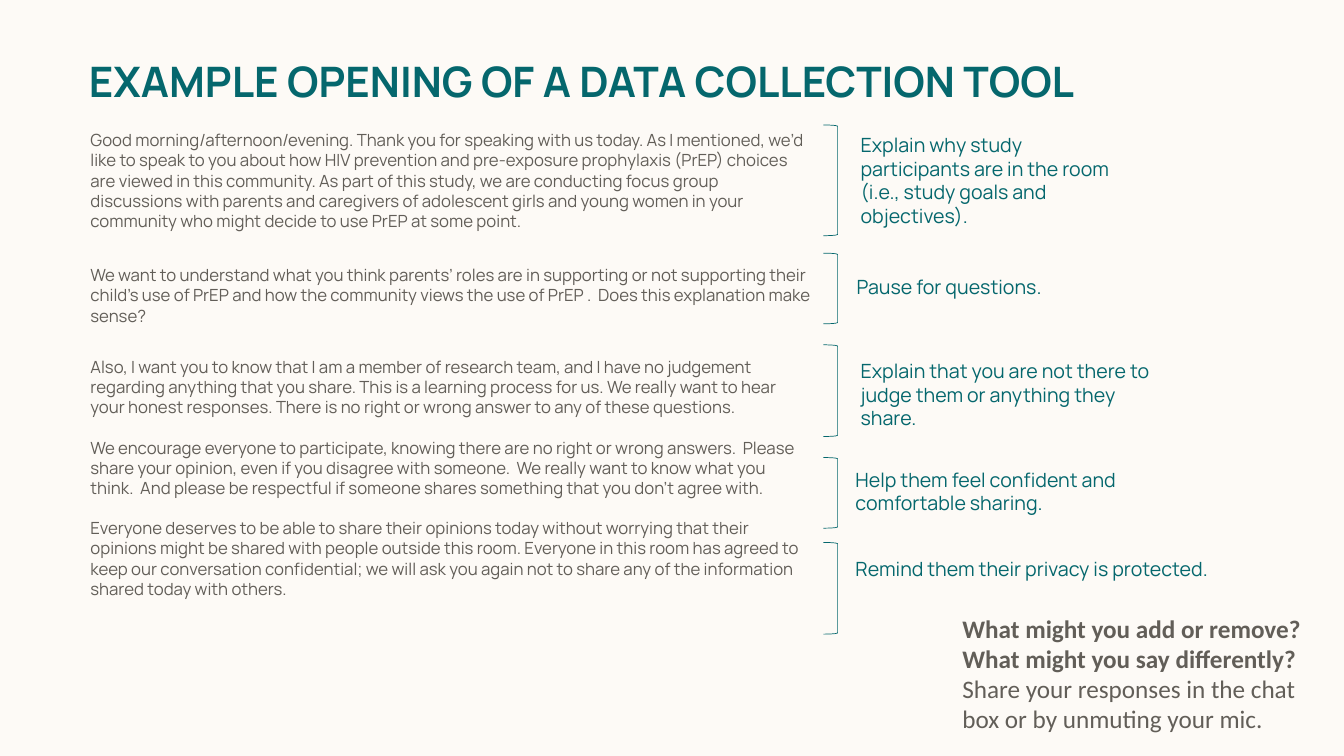
from pptx import Presentation
from pptx import util as u
from pptx.dml import color
from pptx.enum import shapes, text

TEAL, GREY, CREAM = "05676D", "625E58", "FDFAF6"

# Space before (pt) and words of each part of the script read to participants
OPENING = [
    (0, "Good morning/afternoon/evening. Thank you for speaking with us today. As I mentioned, "
        "we’d like to speak to you about how HIV prevention and pre-exposure prophylaxis (PrEP) "
        "choices are viewed in this community. As part of this study, we are conducting focus "
        "group discussions with parents and caregivers of adolescent girls and young women in "
        "your community who might decide to use PrEP at some point."),
    (24.4, "We want to understand what you think parents’ roles are in supporting or not "
           "supporting their child’s use of PrEP and how the community views the use of PrEP .  "
           "Does this explanation make sense?"),
    (22.4, "Also, I want you to know that I am a member of research team, and I have no "
           "judgement regarding anything that you share. This is a learning process for us. We "
           "really want to hear your honest responses. There is no right or wrong answer to any "
           "of these questions."),
    (14.4, "We encourage everyone to participate, knowing there are no right or wrong answers.  "
           "Please share your opinion, even if you disagree with someone.  We really want to "
           "know what you think.  And please be respectful if someone shares something that you "
           "don’t agree with."),
    (14.4, "Everyone deserves to be able to share their opinions today without worrying that "
           "their opinions might be shared with people outside this room. Everyone in this room "
           "has agreed to keep our conversation confidential; we will ask you again not to share "
           "any of the information shared today with others."),
]

# Bracket top and height, then the note's box (cm) and words
NOTES = [
    (3.15, 2.79, (21.44, 3.23, 7.34, 2.64),
     "Explain why study participants are in the room (i.e., study goals and objectives)."),
    (6.38, 1.78, (21.34, 6.81, 7.34, 0.86), "Pause for questions."),
    (8.69, 2.31, (21.44, 8.92, 8.13, 2.06),
     "Explain that you are not there to judge them or anything they share."),
    (11.53, 1.78, (21.31, 11.66, 9.55, 1.45),
     "Help them feel confident and comfortable sharing."),
    (13.67, 2.31, (21.31, 13.92, 9.55, 1.45), "Remind them their privacy is protected."),
]


def rgb(value):
    return color.RGBColor.from_string(value)


def cm(*lengths):
    return [u.Cm(length) for length in lengths]


def write(paragraph, words, size=14, font="Manrope", fill=TEAL, bold=False, before=0):
    paragraph.alignment = text.PP_ALIGN.LEFT
    paragraph.space_before = u.Pt(before)
    run = paragraph.add_run()
    run.text = words
    run.font.name, run.font.size, run.font.bold = font, u.Pt(size), bold
    run.font.color.rgb = rgb(fill)


class Page:
    """Holds the slide and its style."""

    def __init__(self, slide):
        self.slide = slide
        slide.background.fill.solid()
        slide.background.fill.fore_color.rgb = rgb(CREAM)

    def fill_frame(self, frame, parts, **style):
        frame.word_wrap = True
        for index, (before, words) in enumerate(parts):
            paragraph = frame.add_paragraph() if index else frame.paragraphs[0]
            write(paragraph, words, before=before, **style)

    def title(self, words, box):
        heading = self.slide.shapes.title
        heading.left, heading.top, heading.width, heading.height = cm(*box)
        frame = heading.text_frame
        frame.auto_size = text.MSO_AUTO_SIZE.NONE
        frame.vertical_anchor = text.MSO_ANCHOR.MIDDLE
        frame.margin_left = u.Cm(2.24)
        self.fill_frame(frame, [(0, words)], size=30, bold=True)
        frame.paragraphs[0].line_spacing = 0.9

    def text_box(self, parts, box, **style):
        frame = self.slide.shapes.add_textbox(*cm(*box)).text_frame
        self.fill_frame(frame, parts, **style)
        frame.auto_size = text.MSO_AUTO_SIZE.SHAPE_TO_FIT_TEXT

    def shape(self, kind, box):
        shape = self.slide.shapes.add_shape(kind, *cm(*box))
        shape.shadow.inherit = False
        shape.fill.background()
        return shape

    def bracket(self, top, height):
        bracket = self.shape(shapes.MSO_SHAPE.RIGHT_BRACKET, (20.75, top, 0.36, height))
        bracket.line.color.rgb = rgb(TEAL)
        bracket.line.width = u.Pt(0.5)

    def prompt(self, question, request, box):
        panel = self.shape(shapes.MSO_SHAPE.ROUNDED_RECTANGLE, box)
        panel.line.fill.background()
        frame = panel.text_frame
        frame.word_wrap = True
        frame.vertical_anchor = text.MSO_ANCHOR.MIDDLE
        style = {"size": 18, "font": "Calibri", "fill": GREY}
        write(frame.paragraphs[0], question, bold=True, **style)
        write(frame.add_paragraph(), request, **style)


def main():
    deck = Presentation()
    deck.slide_width, deck.slide_height = cm(33.87, 19.05)
    page = Page(deck.slides.add_slide(deck.slide_layouts.get_by_name("Title Only")))

    # Heading and opening script
    page.title("EXAMPLE OPENING OF A DATA COLLECTION TOOL", (0, 0.53, 29.21, 3.18))
    page.text_box(OPENING, (2.03, 3.15, 18.69, 14.17), size=12, fill=GREY)

    # Bracketed notes on each part
    for top, height, note_box, note in NOTES:
        page.bracket(top, height)
        page.text_box([(0, note)], note_box)

    # Closing question to the audience
    page.prompt("What might you add or remove? What might you say differently?",
                "Share your responses in the chat box or by unmuting your mic.",
                (23.88, 15.7, 9.55, 2.54))

    deck.save("out.pptx")


if __name__ == "__main__":
    main()
